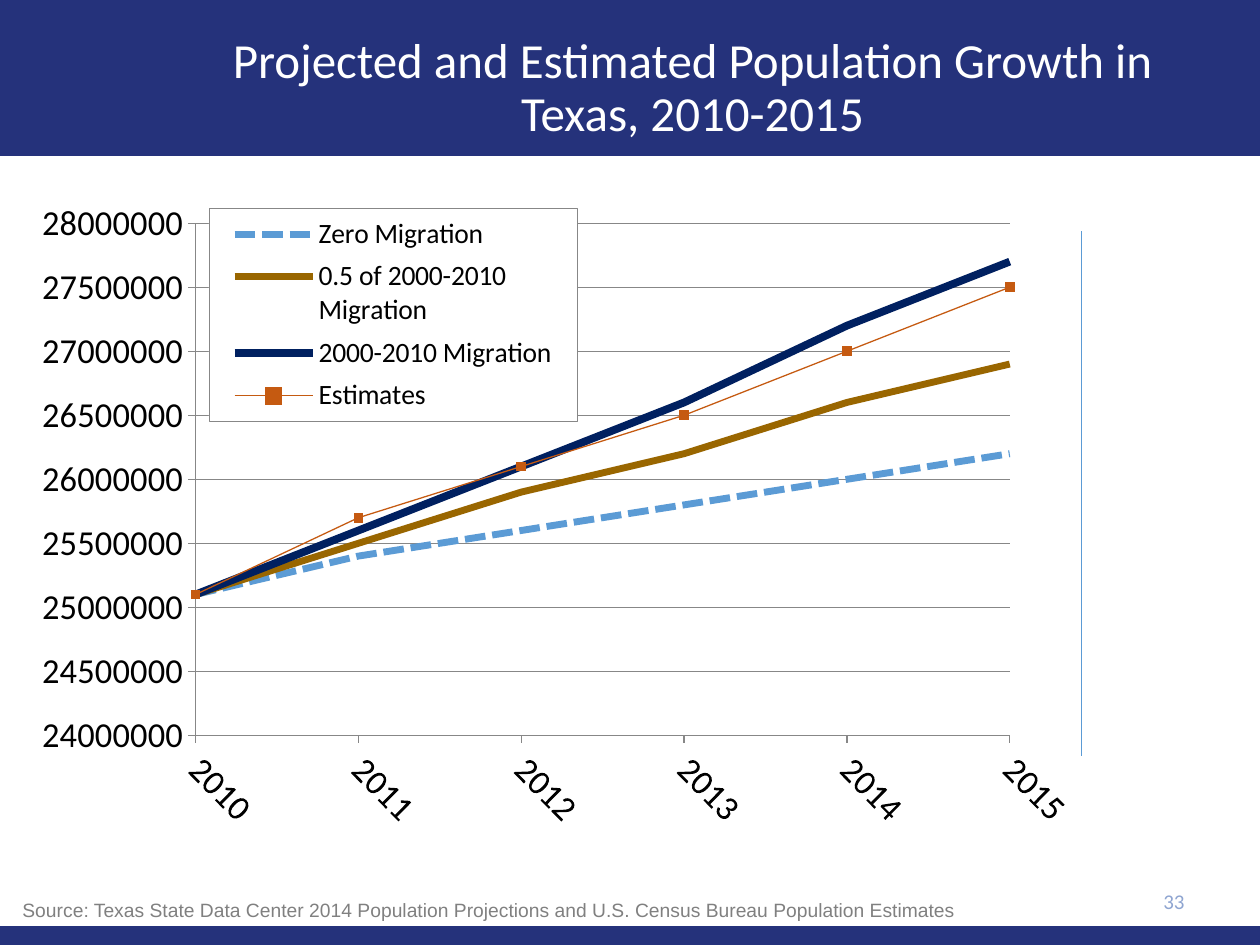
"""Build the slide on projected and estimated population growth in Texas."""
import pptx
import pptx.chart.data
import pptx.dml.color
import pptx.enum.chart
import pptx.enum.dml
import pptx.enum.shapes
import pptx.enum.text
import pptx.oxml
import pptx.oxml.ns
import pptx.util
from lxml import etree

PX = 914400 // 126
COLORS = {
    "navy": "25327B", "white": "FFFFFF", "black": "000000", "grid": "878787",
    "number": "8FA5D1", "source": "808080", "sky": "5B9BD5", "gold": "996600",
    "midnight": "002060", "rust": "C55A11", "orange": "ED7D31",
}
ALIGN = pptx.enum.text.PP_ALIGN
ANCHOR = pptx.enum.text.MSO_ANCHOR

BANDS = [(0, 0, 1260, 156), (0, 926, 1260, 19)]
TEXTS = [
    ("Projected and Estimated Population Growth in Texas, 2010-2015",
     (220, 21, 945, 136), "Calibri", 28, "white", ALIGN.CENTER, ANCHOR.MIDDLE, 0.9),
    ("33", (903, 876, 294, 50), "Calibri", 12, "number", ALIGN.RIGHT, ANCHOR.MIDDLE, 1),
    ("Source: Texas State Data Center 2014 Population Projections and "
     "U.S. Census Bureau Population Estimates",
     (10, 892, 1207, 71), "Arial", 11, "source", ALIGN.LEFT, ANCHOR.TOP, 1),
]
YEARS = ["2010", "2011", "2012", "2013", "2014", "2015"]
SERIES = [
    ("Zero Migration", (25.1, 25.4, 25.6, 25.8, 26.0, 26.2), "sky", 4),
    ("0.5 of 2000-2010 Migration", (25.1, 25.5, 25.9, 26.2, 26.6, 26.9), "gold", 4),
    ("2000-2010 Migration", (25.1, 25.6, 26.1, 26.6, 27.2, 27.7), "midnight", 4.5),
    ("Estimates", (25.1, 25.7, 26.1, 26.5, 27.0, 27.5), "rust", 0.75),
]
CHART_BOX = (42, 199, 1134, 655)
PLOT_BOX = (179, 223, 828, 512)
LEGEND_BOX = (193, 209, 374, 212)
SIDE_LINE = (1081, 756, 1081, 231)


def rgb(name):
    return pptx.dml.color.RGBColor.from_string(COLORS[name])


def emu(lengths):
    return [length * PX for length in lengths]


def set_fill(fill, color):
    fill.solid()
    fill.fore_color.rgb = rgb(color)


def set_line(line, color, width):
    line.color.rgb = rgb(color)
    line.width = pptx.util.Pt(width)


def set_font(font, name, size, color):
    font.name = name
    font.size = pptx.util.Pt(size)
    font.color.rgb = rgb(color)


def manual_layout(box, inner=False):
    left, top, width, height = CHART_BOX
    shares = {"x": (box[0] - left) / width, "y": (box[1] - top) / height,
              "w": box[2] / width, "h": box[3] / height}
    target = '<c:layoutTarget val="inner"/>' if inner else ""
    modes = '<c:xMode val="edge"/><c:yMode val="edge"/>'
    sizes = "".join(f'<c:{key} val="{share:.3f}"/>' for key, share in shares.items())
    return pptx.oxml.parse_xml(
        f'<c:layout {pptx.oxml.ns.nsdecls("c")}><c:manualLayout>'
        f"{target}{modes}{sizes}</c:manualLayout></c:layout>")


def replace_layout(parent, layout, index):
    for old in parent.findall(pptx.oxml.ns.qn("c:layout")):
        parent.remove(old)
    parent.insert(index, layout)


def add_text(slide, text, box, font, size, color, align, anchor, spacing):
    frame = slide.shapes.add_textbox(*emu(box)).text_frame
    frame.word_wrap = True
    frame.vertical_anchor = anchor
    paragraph = frame.paragraphs[0]
    paragraph.text = text
    paragraph.alignment = align
    paragraph.line_spacing = spacing
    set_font(paragraph.font, font, size, color)


def add_growth_chart(slide):
    growth = pptx.chart.data.CategoryChartData(number_format="0")
    growth.categories = YEARS
    for name, millions, _, _ in SERIES:
        growth.add_series(name, [round(value * 1000000) for value in millions])
    chart = slide.shapes.add_chart(
        pptx.enum.chart.XL_CHART_TYPE.LINE_MARKERS, *emu(CHART_BOX), growth).chart
    chart.has_title = False
    set_font(chart.font, "Calibri", 20, "black")
    plot = chart.plots[0]
    plot.vary_by_categories = False

    for series, (name, _, color, width) in zip(plot.series, SERIES):
        series.smooth = False
        set_line(series.format.line, color, width)
        series.marker.style = pptx.enum.chart.XL_MARKER_STYLE.NONE
        if name == "Zero Migration":
            series.format.line.dash_style = pptx.enum.dml.MSO_LINE.SQUARE_DOT
        if name == "Estimates":
            series.marker.style = pptx.enum.chart.XL_MARKER_STYLE.SQUARE
            series.marker.size = 5
            set_fill(series.marker.format.fill, "orange")
            set_line(series.marker.format.line, color, 0.75)

    years, people = chart.category_axis, chart.value_axis
    for axis in (years, people):
        axis.major_tick_mark = pptx.enum.chart.XL_TICK_MARK.OUTSIDE
        axis.minor_tick_mark = pptx.enum.chart.XL_TICK_MARK.NONE
        set_line(axis.format.line, "grid", 0.75)
        set_font(axis.tick_labels.font, "Calibri", 20, "black")
    people.minimum_scale, people.maximum_scale = 24000000, 28000000
    people.major_unit = 500000
    people.tick_labels.number_format = "0"
    people.tick_labels.number_format_is_linked = False
    people.has_major_gridlines = True
    set_line(people.major_gridlines.format.line, "grid", 0.75)
    qn = pptx.oxml.ns.qn
    people._element.find(qn("c:crosses")).addnext(pptx.oxml.parse_xml(
        f'<c:crossBetween {pptx.oxml.ns.nsdecls("c")} val="midCat"/>'))
    years._element.find(qn("c:txPr")).find(qn("a:bodyPr")).set("rot", "2700000")

    chart.has_legend = True
    legend = chart.legend
    legend.position = pptx.enum.chart.XL_LEGEND_POSITION.LEFT
    legend.include_in_layout = True
    set_font(legend.font, "Calibri", 16, "black")
    replace_layout(legend._element, manual_layout(LEGEND_BOX), 1)
    replace_layout(chart._chartSpace.chart.plotArea, manual_layout(PLOT_BOX, True), 0)
    frame = pptx.oxml.parse_xml(
        f'<c:spPr {pptx.oxml.ns.nsdecls("c", "a")}>'
        f'<a:solidFill><a:srgbClr val="{COLORS["white"]}"/></a:solidFill>'
        f'<a:ln w="6350"><a:solidFill><a:srgbClr val="{COLORS["grid"]}"/>'
        "</a:solidFill></a:ln></c:spPr>")
    legend._element.find(qn("c:txPr")).addprevious(frame)


def main():
    deck = pptx.Presentation()
    deck.slide_width, deck.slide_height = emu((1260, 945))
    slide = deck.slides.add_slide(deck.slide_layouts[6])
    for box in BANDS:
        band = slide.shapes.add_shape(
            pptx.enum.shapes.MSO_SHAPE.RECTANGLE, *emu(box))
        band.shadow.inherit = False
        set_fill(band.fill, "navy")
        band.line.fill.background()
    add_growth_chart(slide)
    for text in TEXTS:
        add_text(slide, *text)
    side = slide.shapes.add_connector(
        pptx.enum.shapes.MSO_CONNECTOR.STRAIGHT, *emu(SIDE_LINE))
    set_line(side.line, "sky", 0.5)
    etree.SubElement(side._element.spPr, pptx.oxml.ns.qn("a:effectLst"))
    deck.save("out.pptx")


if __name__ == "__main__":
    main()
